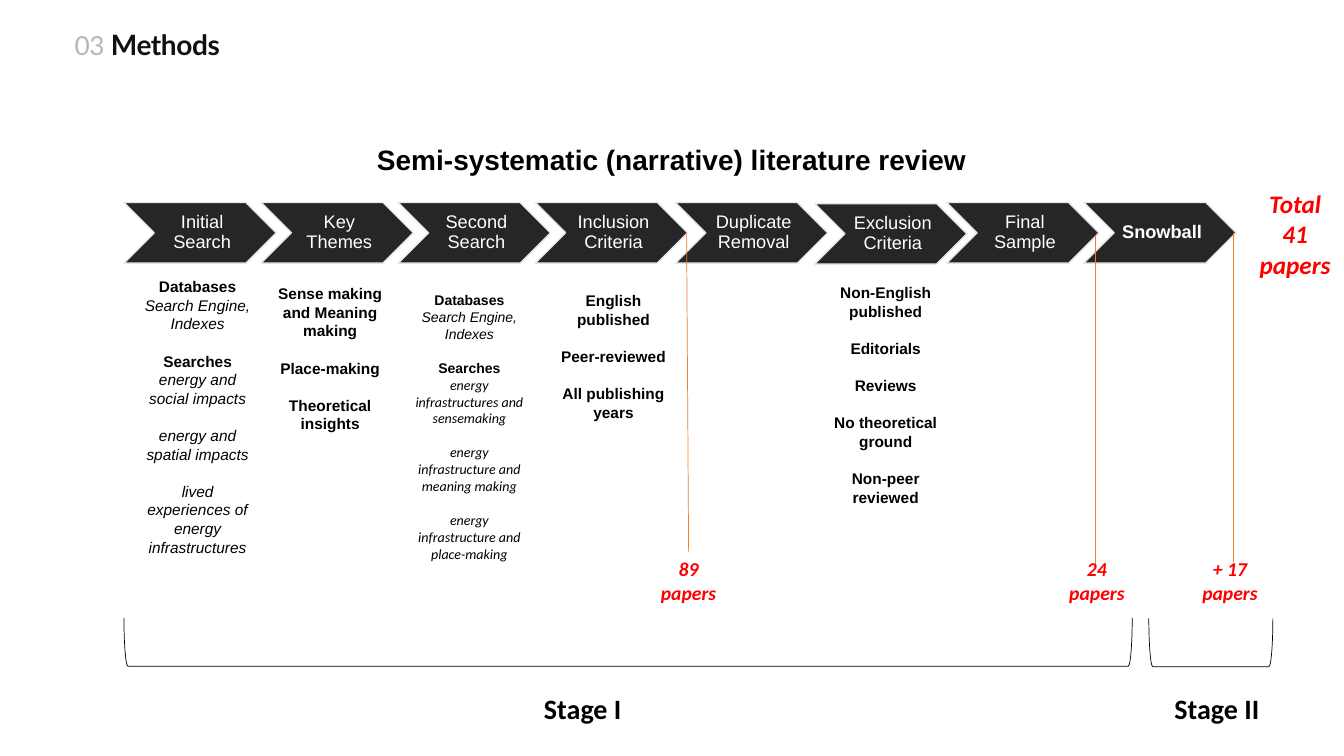
import pptx
import pptx.util
import pptx.dml.color
import pptx.enum.shapes
import pptx.enum.text
import pptx.oxml.ns
import lxml.etree

Inches = pptx.util.Inches
Pt = pptx.util.Pt
SHAPES = pptx.enum.shapes.MSO_SHAPE
ALIGN = pptx.enum.text.PP_ALIGN
ANCHOR = pptx.enum.text.MSO_ANCHOR
AUTO_SIZE = pptx.enum.text.MSO_AUTO_SIZE

BOLD = {"bold": True}
ITALIC = {"italic": True}
THEME = {"italic": True, "font": "Calibri"}
COUNT = {"bold": True, "italic": True, "font": "Calibri", "color": "FF0000"}
STAGE = {"bold": True, "font": "Calibri"}


def color(value):
    return pptx.dml.color.RGBColor.from_string(value)


class MethodsSlide:
    def __init__(self, deck):
        self.page = deck.slides.add_slide(deck.slide_layouts[5])
        self.shapes = self.page.shapes

    def style(self, span, size, font="Arial", color_value="000000", bold=False, italic=False):
        span.font.name = font
        span.font.size = Pt(size)
        span.font.bold = bold
        span.font.italic = italic
        span.font.color.rgb = color(color_value)

    def fill_paragraph(self, para, text, size, look):
        para.text = text
        for span in para.runs:
            self.style(span, size, look.get("font", "Arial"), look.get("color", "000000"),
                       look.get("bold", False), look.get("italic", False))

    def margins(self, frame, left, other):
        frame.margin_left = Inches(left)
        frame.margin_top = frame.margin_right = frame.margin_bottom = Inches(other)

    def title(self, number, name):
        box = self.shapes.title
        box.left, box.top, box.width, box.height = map(Inches, (0.74, 0.31, 9.33, 0.3))
        frame = box.text_frame
        frame.auto_size = AUTO_SIZE.NONE
        frame.vertical_anchor = ANCHOR.TOP
        self.margins(frame, 0, 0)
        para = frame.paragraphs[0]
        para.alignment = ALIGN.LEFT
        para.line_spacing = Pt(21.6)
        for text, size, value, bold in ((number, 18.7, "B7B7B7", False), (name, 20, "111111", True)):
            span = para.add_run()
            span.text = text
            self.style(span, size, "Lato", value, bold)
            span.font._element.set("spc", "-30")

    def text(self, left, top, width, height, groups, size, align=ALIGN.CENTER, pitch=None):
        box = self.shapes.add_textbox(Inches(left), Inches(top), Inches(width), Inches(height))
        frame = box.text_frame
        frame.word_wrap = True
        frame.auto_size = AUTO_SIZE.SHAPE_TO_FIT_TEXT
        para = None
        for group in groups:
            for index, (text, look) in enumerate(group):
                starts_group = index == 0 and para is not None
                para = frame.paragraphs[0] if para is None else frame.add_paragraph()
                self.fill_paragraph(para, text, size, look)
                para.alignment = align
                if pitch:
                    para.line_spacing = Pt(pitch)
                    if starts_group:
                        para.space_before = Pt(pitch)

    def step(self, left, top, label, look):
        arrow = self.shapes.add_shape(SHAPES.CHEVRON, Inches(left), Inches(top), Inches(1.51), Inches(0.6))
        arrow.shadow.inherit = False
        arrow.fill.solid()
        arrow.fill.fore_color.rgb = color("262626")
        arrow.line.color.rgb = color("E7E6E6")
        arrow.line.width = Pt(1)
        frame = arrow.text_frame
        frame.word_wrap = True
        frame.vertical_anchor = ANCHOR.MIDDLE
        self.margins(frame, 0.06, 0.02)
        para = frame.paragraphs[0]
        self.fill_paragraph(para, label, 13, {"color": "FFFFFF", **look})
        para.alignment = ALIGN.CENTER
        para.line_spacing = 0.9

    def bracket(self, left, top, height):
        bracket = self.shapes.add_shape(SHAPES.LEFT_BRACKET, Inches(left), Inches(top),
                                        Inches(0.48), Inches(height))
        bracket.rotation = 270
        bracket.shadow.inherit = False
        bracket.fill.background()
        bracket.line.color.rgb = color("000000")
        bracket.line.width = Pt(0.5)

    def line(self, *ends):
        line = self.shapes.add_connector(pptx.enum.shapes.MSO_CONNECTOR.STRAIGHT, *map(Inches, ends))
        line.line.color.rgb = color("ED7D31")
        line.line.width = Pt(0.5)
        lxml.etree.SubElement(line._element.spPr, pptx.oxml.ns.qn("a:effectLst"))


STEPS = [
    (1.23, 2.01, "Initial Search", {}),
    (2.59, 2.01, "Key Themes", {}),
    (3.95, 2.01, "Second Search", {}),
    (5.31, 2.01, "Inclusion Criteria", {}),
    (6.7, 2.01, "Duplicate Removal", {}),
    (8.08, 2.02, "Exclusion Criteria", {}),
    (9.39, 2.01, "Final Sample", {}),
    (10.75, 2.01, "Snowball", BOLD),
]

SOURCES = [("Databases", BOLD), ("Search Engine, Indexes", ITALIC)]

COLUMNS = [
    (1.27, 2.7, 1.38, 2.88, 11, 13.3, [
        SOURCES,
        [("Searches", BOLD), ("energy and social impacts", ITALIC)],
        [("energy and spatial impacts", ITALIC)],
        [("lived experiences of energy infrastructures", ITALIC)]]),
    (2.63, 2.77, 1.29, 1.58, 11, 13.3, [
        [("Sense making", BOLD), ("and Meaning making", BOLD)],
        [("Place-making", BOLD)],
        [("Theoretical insights", BOLD)]]),
    (4.01, 2.84, 1.29, 2.79, 10, 12.1, [
        SOURCES,
        [("Searches", BOLD), ("energy infrastructures and sensemaking", THEME)],
        [("energy infrastructure and meaning making", THEME)],
        [("energy infrastructure and place-making", THEME)]]),
    (5.46, 2.84, 1.25, 1.4, 11, 13.3, [
        [(text, BOLD)] for text in ("English published", "Peer-reviewed", "All publishing years")]),
    (8.15, 2.76, 1.27, 2.51, 11, 13.3, [
        [(text, BOLD)] for text in ("Non-English published", "Editorials", "Reviews",
                                    "No theoretical ground", "Non-peer reviewed")]),
]

COUNTS = [(6.36, ["89 papers"]), (10.41, ["24", "papers"]), (11.73, ["+ 17", "papers"])]
DROPS = [(6.81, 2.31, 6.83, 5.48), (10.86, 2.33, 10.86, 5.6), (12.23, 2.31, 12.23, 5.58)]
STAGES = [(5.23, "Stage I", 5.99, 1.37, 10), (11.52, "Stage II", 11.77, 5.76, 1.23)]


def main():
    deck = pptx.Presentation()
    deck.slide_width = Inches(13.33)
    deck.slide_height = Inches(7.5)
    slide = MethodsSlide(deck)
    slide.title("03 ", "Methods")
    slide.text(3.64, 1.36, 6.05, 0.44,
               [[("Semi-systematic (narrative) literature review", BOLD)]], 20, ALIGN.LEFT)
    for label_left, label, left, top, height in STAGES:
        slide.bracket(left, top, height)
        slide.text(label_left, 6.81, 1.1, 0.44, [[(label, STAGE)]], 20)
    for left, lines in COUNTS:
        slide.text(left, 5.48, 0.94, 0.57, [[(text, COUNT) for text in lines]], 14)
    for step in STEPS:
        slide.step(*step)
    for left, top, width, height, size, pitch, groups in COLUMNS:
        slide.text(left, top, width, height, groups, size, pitch=pitch)
    for drop in DROPS:
        slide.line(*drop)
    slide.text(12.34, 1.82, 1.01, 1.01, [[("Total", COUNT), ("41 papers", COUNT)]], 18)
    deck.save("out.pptx")


if __name__ == "__main__":
    main()
